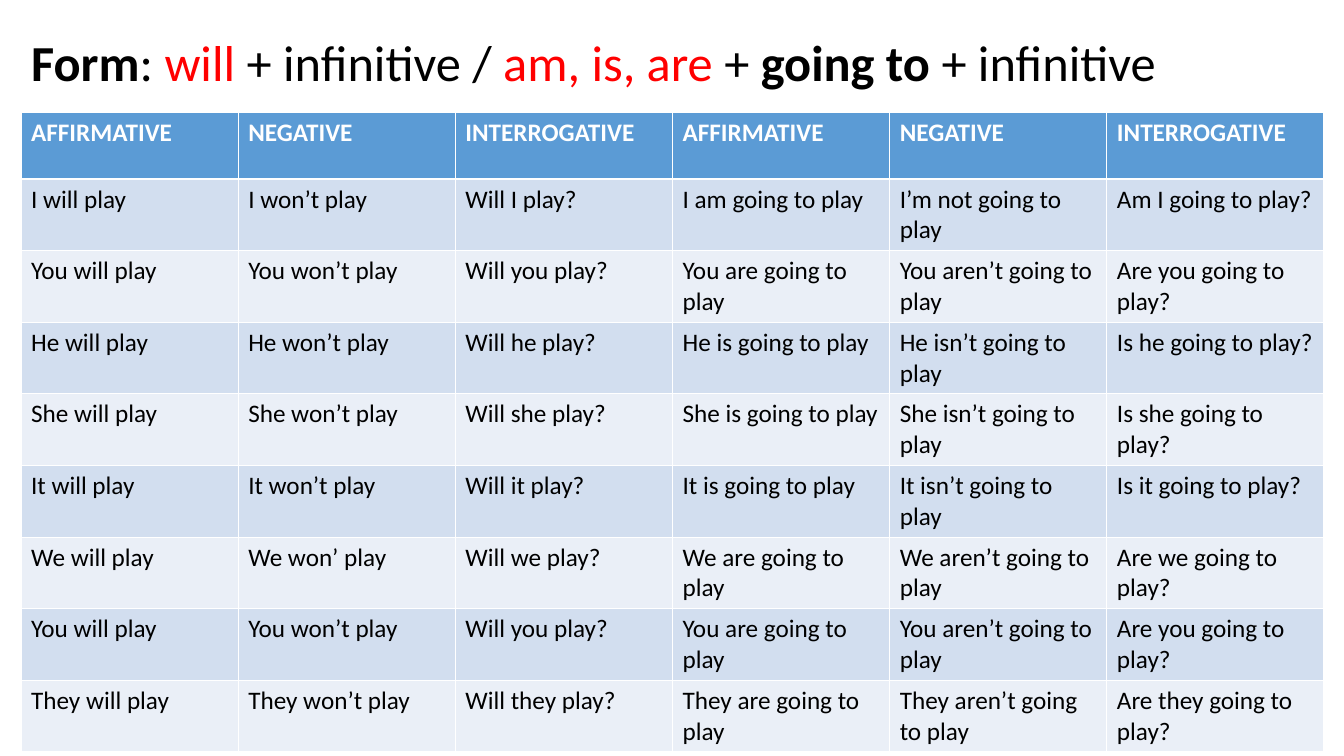
from pptx import Presentation
from pptx.dml.color import RGBColor
from pptx.enum.text import MSO_ANCHOR, MSO_AUTO_SIZE, PP_ALIGN
from pptx.util import Cm, Pt

COLORS = {
    "text": "000000",
    "accent": "FF0000",
    "header": "5B9BD5",
    "header_text": "FFFFFF",
    "odd_row": "D2DEEF",
    "even_row": "EAEFF7",
}
FONT = "Calibri"

# text, colour, bold
TITLE_RUNS = [
    ("Form", "text", True),
    (": ", "text", False),
    ("will", "accent", False),
    (" + infinitive / ", "text", False),
    ("am, is, are ", "accent", False),
    ("+ ", "text", False),
    ("going to ", "text", True),
    ("+ infinitive", "text", False),
]
HEADERS = ["AFFIRMATIVE", "NEGATIVE", "INTERROGATIVE"] * 2

# subject, negative of will, be, subject with negative of be
CONJUGATION = [
    ("I", "won’t", "am", "I’m not"),
    ("You", "won’t", "are", "You aren’t"),
    ("He", "won’t", "is", "He isn’t"),
    ("She", "won’t", "is", "She isn’t"),
    ("It", "won’t", "is", "It isn’t"),
    ("We", "won’", "are", "We aren’t"),
    ("You", "won’t", "are", "You aren’t"),
    ("They", "won’t", "are", "They aren’t"),
]


def rgb(name):
    return RGBColor.from_string(COLORS[name])


def future_forms(subject, wont, be, be_not):
    """Return the six sentences of one table row."""
    asked = subject if subject == "I" else subject.lower()
    return [
        f"{subject} will play",
        f"{subject} {wont} play",
        f"Will {asked} play?",
        f"{subject} {be} going to play",
        f"{be_not} going to play",
        f"{be.capitalize()} {asked} going to play?",
    ]


def add_title(s, left, top, width, height):
    title = s.shapes.title
    title.left, title.top, title.width, title.height = left, top, width, height
    tf = title.text_frame
    tf.auto_size = MSO_AUTO_SIZE.NONE
    tf.vertical_anchor = MSO_ANCHOR.MIDDLE
    p = tf.paragraphs[0]
    p.alignment = PP_ALIGN.LEFT
    p.line_spacing = 0.9
    p.font.size = Pt(36)
    p.font.name = FONT
    for text, color, bold in TITLE_RUNS:
        r = p.add_run()
        r.text = text
        r.font.bold = bold
        r.font.color.rgb = rgb(color)


def fill_cell(cell, text, fill, color, bold):
    cell.fill.solid()
    cell.fill.fore_color.rgb = rgb(fill)
    cell.text = text
    font = cell.text_frame.paragraphs[0].font
    font.name = FONT
    font.size = Pt(18)
    font.bold = bold
    font.color.rgb = rgb(color)


def add_forms_table(s, left, top, width, height):
    rows = [HEADERS] + [future_forms(*entry) for entry in CONJUGATION]
    table = s.shapes.add_table(
        len(rows), len(HEADERS), left, top, width, height).table
    for i, row in enumerate(rows):
        if i == 0:
            style = ("header", "header_text", True)
        else:
            style = ("odd_row" if i % 2 else "even_row", "text", False)
        for j, text in enumerate(row):
            fill_cell(table.cell(i, j), text, *style)


def main():
    prs = Presentation()
    prs.slide_width, prs.slide_height = Cm(33.87), Cm(19.05)
    s = prs.slides.add_slide(prs.slide_layouts[5])
    left, width = Cm(0.53), Cm(32.84)
    add_title(s, left, Cm(1.02), width, Cm(1.27))
    add_forms_table(s, left, Cm(2.84), width, Cm(15.03))
    prs.save("out.pptx")


if __name__ == "__main__":
    main()
